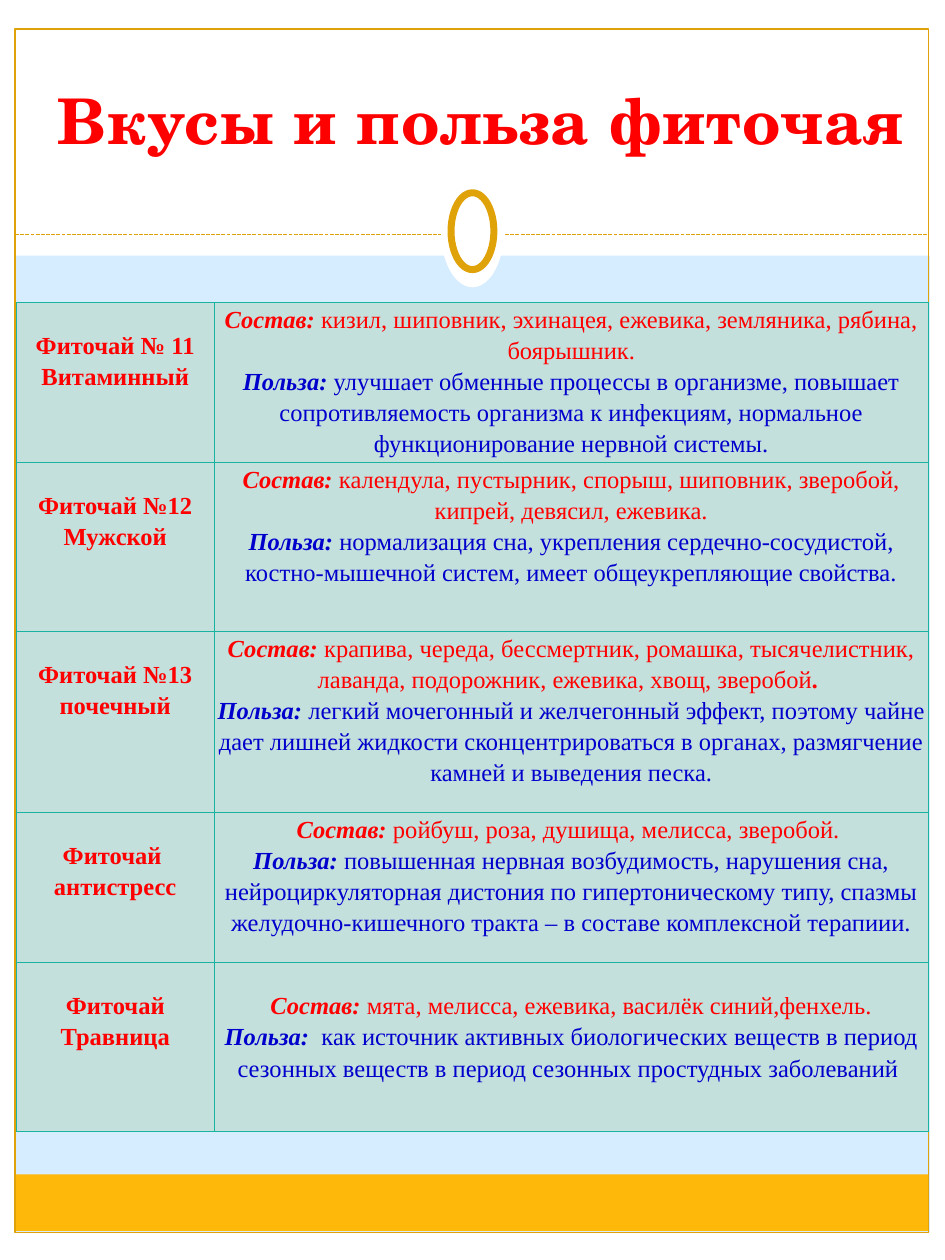
from lxml import etree
from pptx import Presentation
from pptx.dml.color import RGBColor
from pptx.enum import dml, shapes, text
from pptx.oxml import ns
from pptx.util import Inches, Pt

WHITE = RGBColor(0xFF, 0xFF, 0xFF)
SKY = RGBColor(0xD6, 0xEC, 0xFF)
AMBER = RGBColor(0xFE, 0xB8, 0x0A)
GOLD = RGBColor(0xE0, 0xA2, 0x09)
RED = RGBColor(0xFF, 0x00, 0x00)
BLUE = RGBColor(0x00, 0x00, 0xCC)
MINT = RGBColor(0xC4, 0xE0, 0xDC)
TEAL = RGBColor(0x1A, 0xB3, 0x9F)

TITLE = "Вкусы и польза фиточая"
TEAS = [
    (["Фиточай № 11", "Витаминный"],
     "кизил, шиповник, эхинацея, ежевика, земляника, рябина, боярышник.", "",
     "улучшает обменные процессы в организме, повышает сопротивляемость организма к инфекциям, "
     "нормальное функционирование нервной системы."),
    (["Фиточай №12 Мужской"],
     "календула, пустырник, спорыш, шиповник, зверобой, кипрей, девясил, ежевика.", "",
     "нормализация сна, укрепления сердечно-сосудистой, костно-мышечной систем, "
     "имеет общеукрепляющие свойства."),
    (["Фиточай №13 почечный"],
     "крапива, череда, бессмертник, ромашка, тысячелистник, лаванда, подорожник, ежевика, "
     "хвощ, зверобой", ". ",
     "легкий мочегонный и желчегонный эффект, поэтому чайне дает лишней жидкости "
     "сконцентрироваться в органах, размягчение камней и выведения песка."),
    (["Фиточай ", "антистресс"],
     "ройбуш, роза, душища, мелисса, зверобой. ", "",
     "повышенная нервная возбудимость, нарушения сна, нейроциркуляторная дистония по "
     "гипертоническому типу, спазмы желудочно-кишечного тракта – в составе комплексной терапиии."),
    (["Фиточай Травница"],
     "мята, мелисса, ежевика, василёк синий,фенхель.", "",
     " как источник активных биологических веществ в период сезонных веществ в период "
     "сезонных простудных заболеваний "),
]
COLUMN_WIDTHS = [1.57, 5.67]
ROW_HEIGHTS = [1.27, 1.34, 1.44, 1.19, 1.34]
BLANK_LINE = 0.21

RECT, OVAL = shapes.MSO_SHAPE.RECTANGLE, shapes.MSO_SHAPE.OVAL
DECOR = [
    (RECT, (0, 9.78, 7.5, 0.22), WHITE, None),
    (RECT, (0, 0, 7.5, 2.03), WHITE, None),
    (RECT, (0, 0, 0.12, 10), WHITE, None),
    (RECT, (7.38, 0, 0.12, 10), WHITE, None),
    (RECT, (0.12, 9.32, 7.25, 0.45), AMBER, None),
    (RECT, (0.12, 0.23, 7.25, 9.55), None, 0.75),
]
RING = [
    (OVAL, (3.5, 1.39, 0.5, 0.89), WHITE, None),
    (OVAL, (3.58, 1.53, 0.34, 0.61), WHITE, 4),
]


def add_decor(page, kind, place, fill, line_width):
    shape = page.shapes.add_shape(kind, *map(Inches, place))
    shape.shadow.inherit = False
    if fill is None:
        shape.fill.background()
    else:
        shape.fill.solid()
        shape.fill.fore_color.rgb = fill
    if line_width is None:
        shape.line.fill.background()
    else:
        shape.line.color.rgb = GOLD
        shape.line.width = Pt(line_width)


def add_divider(page):
    line = page.shapes.add_connector(
        shapes.MSO_CONNECTOR.STRAIGHT, Inches(0.12), Inches(1.86), Inches(7.37), Inches(1.86))
    line.line.color.rgb = GOLD
    line.line.width = Pt(0.75)
    line.line.dash_style = dml.MSO_LINE.SQUARE_DOT
    etree.SubElement(line._element.spPr, ns.qn("a:effectLst"))


def place_title(page):
    title = page.shapes.title
    title.left, title.top, title.width, title.height = map(Inches, (0.29, 0.59, 7.06, 0.71))
    frame = title.text_frame
    frame.text = TITLE
    frame.word_wrap = False
    frame.vertical_anchor = text.MSO_ANCHOR.MIDDLE
    para = frame.paragraphs[0]
    para.alignment = text.PP_ALIGN.CENTER
    font = para.font
    font.name, font.size, font.bold = "TeX Gyre Schola", Pt(36), True
    font.color.rgb = RED
    para.runs[0].font._element.set("spc", "50")
    page.shapes._spTree.append(title._element)


def fill_cell(cell, paragraphs, top):
    cell.margin_left = cell.margin_right = Inches(0.02)
    cell.margin_top, cell.margin_bottom = Inches(top), 0
    frame = cell.text_frame
    for index, (color, spans) in enumerate(paragraphs):
        para = frame.add_paragraph() if index else frame.paragraphs[0]
        para.alignment = text.PP_ALIGN.CENTER
        para.line_spacing = 1.15
        para.font.name, para.font.size = "Times New Roman", Pt(14)
        para.font.color.rgb = color
        for words, bold, italic in spans:
            span = para.add_run()
            span.text = words
            span.font.bold, span.font.italic = bold, italic
    properties = cell._tc.get_or_add_tcPr()
    for side in ("lnL", "lnR", "lnT", "lnB"):
        border = etree.SubElement(properties, ns.qn(f"a:{side}"), w=str(Pt(0.75)))
        solid = etree.SubElement(border, ns.qn("a:solidFill"))
        etree.SubElement(solid, ns.qn("a:srgbClr"), val=str(TEAL))
    cell.fill.solid()
    cell.fill.fore_color.rgb = MINT


def add_tea_table(page):
    table = page.shapes.add_table(
        len(TEAS), 2, Inches(0.13), Inches(2.4),
        Inches(sum(COLUMN_WIDTHS)), Inches(sum(ROW_HEIGHTS))).table
    table.first_row = table.horz_banding = False
    for column, width in zip(table.columns, COLUMN_WIDTHS):
        column.width = Inches(width)
    for index, (names, content, ending, benefit) in enumerate(TEAS):
        table.rows[index].height = Inches(ROW_HEIGHTS[index])
        fill_cell(table.cell(index, 0), [(RED, [(name, True, False)]) for name in names], BLANK_LINE)
        composition = [("Состав: ", True, True), (content, False, False)]
        if ending:
            composition.append((ending, True, True))
        effect = [("Польза: ", True, True), (benefit, False, False)]
        last = index == len(TEAS) - 1
        fill_cell(table.cell(index, 1), [(RED, composition), (BLUE, effect)],
                  BLANK_LINE if last else 0)


def main():
    deck = Presentation()
    deck.slide_width, deck.slide_height = Inches(7.5), Inches(10)
    page = deck.slides.add_slide(deck.slide_layouts[5])
    page.background.fill.solid()
    page.background.fill.fore_color.rgb = SKY
    for item in DECOR:
        add_decor(page, *item)
    add_divider(page)
    for item in RING:
        add_decor(page, *item)
    add_tea_table(page)
    place_title(page)
    deck.save("out.pptx")


if __name__ == "__main__":
    main()
